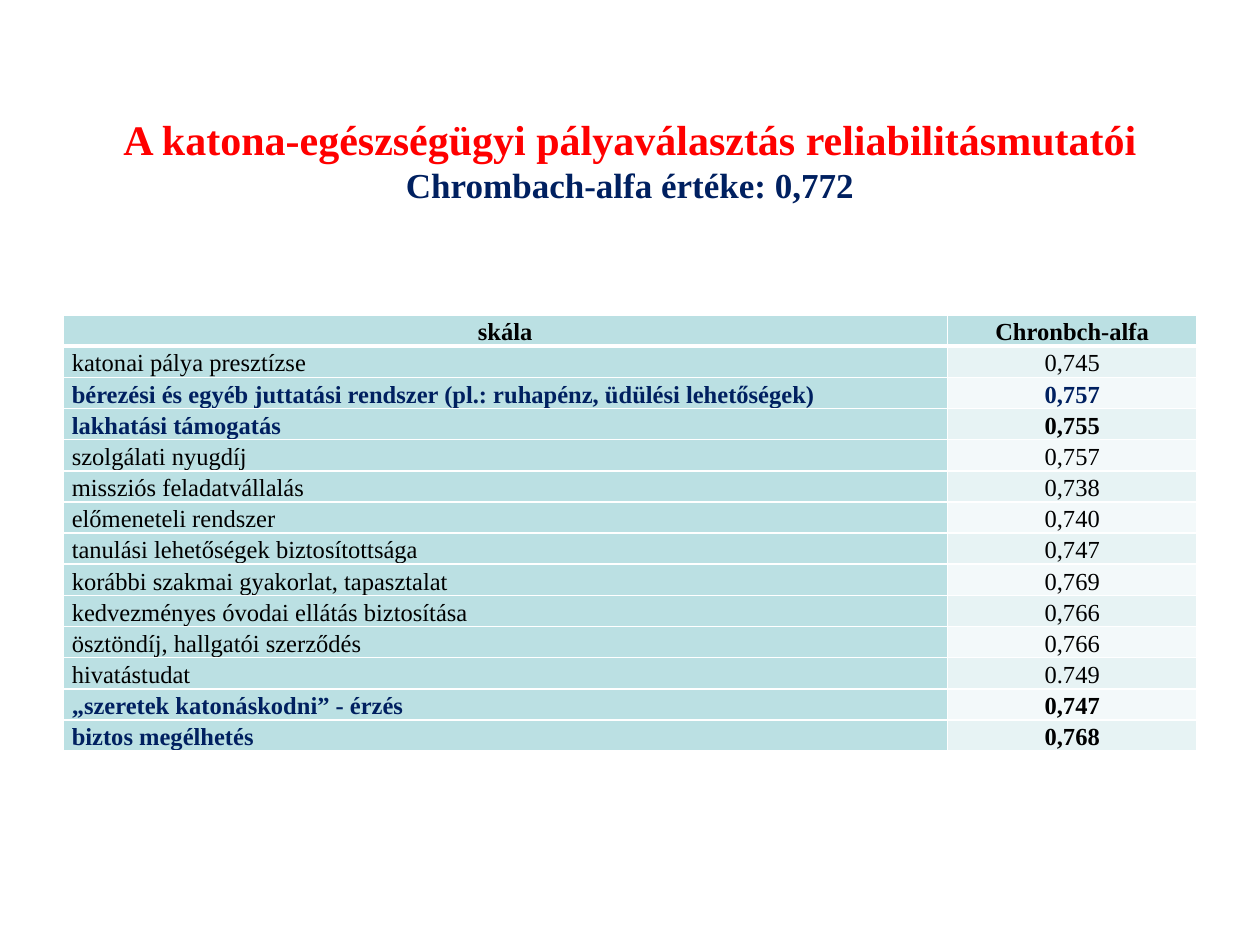
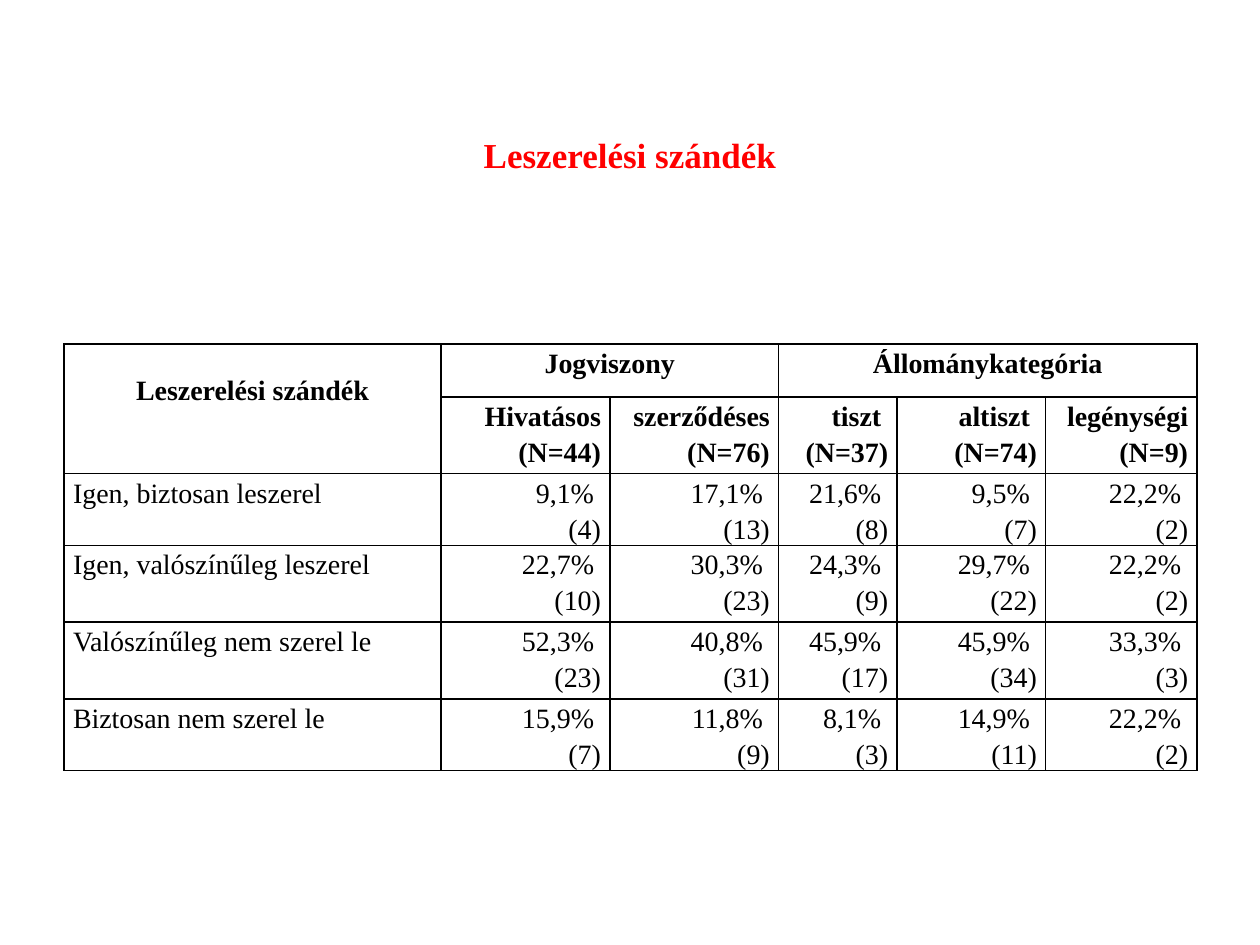
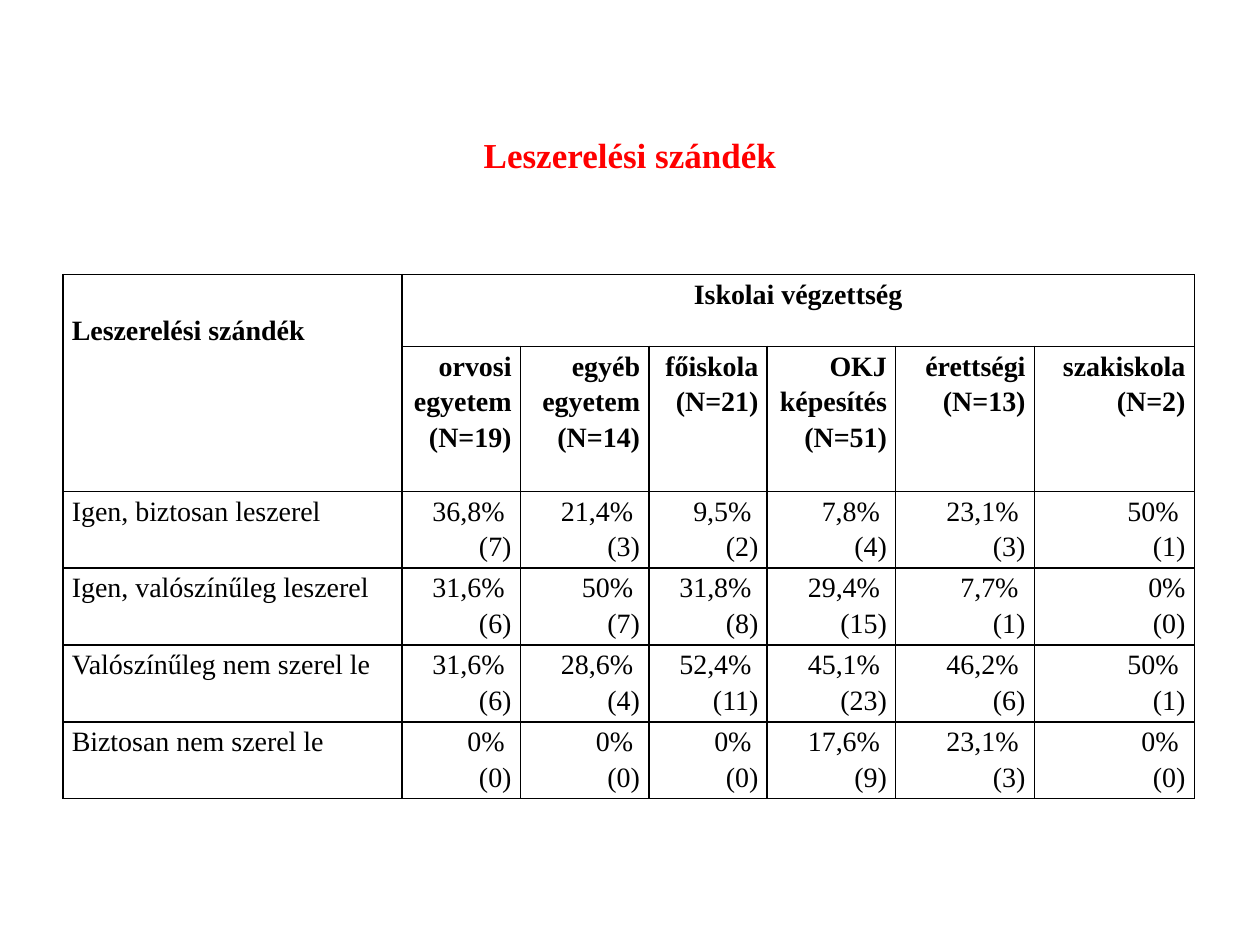
from lxml.etree import SubElement
from pptx import Presentation
from pptx.dml.color import RGBColor
from pptx.enum.text import MSO_ANCHOR as Anchor, MSO_AUTO_SIZE as AutoSize, PP_ALIGN as Align
from pptx.oxml.ns import qn
from pptx.util import Inches, Pt

FONT = "Times New Roman"
RED, NAVY, BLACK, WHITE = "FF0000", "002060", "000000", "FFFFFF"
TEAL, BANDS = "BBE0E3", ("F3F9FA", "E7F3F4")
TITLE_ONLY = 5


def paint(target, color):
    """Give a font its colour, or a fill its solid colour."""
    if hasattr(target, "solid"):
        target.solid()
        target.fore_color.rgb = RGBColor.from_string(color)
    else:
        target.color.rgb = RGBColor.from_string(color)


def add_grid(slide, left, top, height, widths, heights, border):
    """Add a table whose cells have thin margins and one border colour."""
    frame = slide.shapes.add_table(len(heights), len(widths), Inches(left),
                                   Inches(top), Inches(sum(widths)), Inches(height))
    grid = frame.table
    grid.first_row = grid.horz_banding = False
    for column, width in zip(grid.columns, widths):
        column.width = Inches(width)
    for row, row_height in zip(grid.rows, heights):
        row.height = Inches(row_height)
    frame.height = Inches(height)
    for cell in grid.iter_cells():
        cell.margin_left = cell.margin_right = Inches(0.07)
        cell.margin_top = cell.margin_bottom = 0
        for side in ("L", "R", "T", "B"):
            line = SubElement(cell._tc.get_or_add_tcPr(), qn(f"a:ln{side}"), w=str(Pt(1)))
            SubElement(SubElement(line, qn("a:solidFill")), qn("a:srgbClr"), val=border)
        cell.fill.background()
    return grid


reliability = [
    ("skála", "Chronbch-alfa"),
    ("katonai pálya presztízse", "0,745"),
    ("bérezési és egyéb juttatási rendszer (pl.: ruhapénz, üdülési lehetőségek)", "0,757"),
    ("lakhatási támogatás", "0,755"),
    ("szolgálati nyugdíj", "0,757"),
    ("missziós feladatvállalás", "0,738"),
    ("előmeneteli rendszer", "0,740"),
    ("tanulási lehetőségek biztosítottsága", "0,747"),
    ("korábbi szakmai gyakorlat, tapasztalat", "0,769"),
    ("kedvezményes óvodai ellátás biztosítása", "0,766"),
    ("ösztöndíj, hallgatói szerződés", "0,766"),
    ("hivatástudat", "0.749"),
    ("„szeretek katonáskodni” - érzés", "0,747"),
    ("biztos megélhetés", "0,768"),
]
key_rows = (2, 3, 12, 13)
navy_cells = [(row, 0) for row in key_rows] + [(2, 1)]

answers = ["Igen, biztosan leszerel", "Igen, valószínűleg leszerel",
           "Valószínűleg nem szerel le", "Biztosan nem szerel le"]
by_status = {
    "left": 0.51, "top": 2.73, "height": 3.49,
    "widths": [2.99, 1.34, 1.34, 0.94, 1.18, 1.2],
    "heights": [0.42, 0.61, 0.45, 0.61, 0.61, 0.45],
    "corner_align": Align.CENTER, "corner_drop": 0.21,
    "groups": [("Jogviszony", 1, 2), ("Állománykategória", 3, 5)],
    "heads": ["Hivatásos (N=44)", "szerződéses (N=76)", "tiszt \n(N=37)",
              "altiszt \n(N=74)", "legénységi (N=9)"],
    "shares": [
        ["9,1% (4)", "17,1% (13)", "21,6% (8)", "9,5% (7)", "22,2% (2)"],
        ["22,7% (10)", "30,3% (23)", "24,3% (9)", "29,7% (22)", "22,2% (2)"],
        ["52,3% (23)", "40,8% (31)", "45,9% (17)", "45,9% (34)", "33,3% (3)"],
        ["15,9% (7)", "11,8% (9)", "8,1% (3)", "14,9% (11)", "22,2% (2)"],
    ],
}
by_schooling = {
    "left": 0.5, "top": 2.18, "height": 4.17,
    "widths": [2.69, 0.94, 1.02, 0.94, 1.02, 1.1, 1.27],
    "heights": [0.57, 1.15] + [0.61] * 4,
    "corner_align": Align.LEFT, "corner_drop": 0.29,
    "groups": [("Iskolai végzettség", 1, 6)],
    "heads": ["orvosi egyetem\n(N=19)", "egyéb egyetem\n(N=14)", "főiskola\n(N=21)",
              "OKJ képesítés\n(N=51)", "érettségi\n(N=13)", "szakiskola\n(N=2)"],
    "shares": [
        ["36,8% (7)", "21,4% (3)", "9,5% (2)", "7,8% (4)", "23,1% (3)", "50% (1)"],
        ["31,6% (6)", "50% (7)", "31,8% (8)", "29,4% (15)", "7,7% (1)", "0%\n(0)"],
        ["31,6% (6)", "28,6% (4)", "52,4% (11)", "45,1% (23)", "46,2% (6)", "50% (1)"],
        ["0% (0)", "0% (0)", "0% (0)", "17,6% (9)", "23,1% (3)", "0% (0)"],
    ],
}

prs = Presentation()
prs.slide_width, prs.slide_height = Inches(10), Inches(7.5)

# Titles: top, height, and the text, size and colour of each line
intent_title = (0.91, 0.63, [("Leszerelési szándék", 20, RED)])
titles = [
    (0.52, 1.03, [("A katona-egészségügyi pályaválasztás reliabilitásmutatói", 24, RED),
                  ("Chrombach-alfa értéke: 0,772", 20, NAVY)]),
    intent_title,
    intent_title,
]
for top, height, lines in titles:
    title = prs.slides.add_slide(prs.slide_layouts[TITLE_ONLY]).shapes.title
    title.left, title.top = Inches(0.5), Inches(top)
    title.width, title.height = Inches(9), Inches(height)
    heading = title.text_frame
    heading.text = "\v".join(text for text, size, color in lines)
    heading.auto_size = AutoSize.NONE
    heading.vertical_anchor = Anchor.MIDDLE
    if len(lines) > 1:
        heading.vertical_anchor = Anchor.TOP
        heading.margin_top = Inches(0.38)
    heading.paragraphs[0].alignment = Align.CENTER
    for run, (text, size, color) in zip(heading.paragraphs[0].runs, lines):
        run.font.name, run.font.size, run.font.bold = FONT, Pt(size), True
        paint(run.font, color)

reliability_slide, *intent_slides = prs.slides

# Reliability of the career choice scales
scales = add_grid(reliability_slide, 0.5, 2.5, 3.76, [7.02, 1.98],
                  [0.23] * len(reliability), WHITE)
for r, entries in enumerate(reliability):
    for c, text in enumerate(entries):
        cell = scales.cell(r, c)
        paint(cell.fill, TEAL if r == 0 or c == 0 else BANDS[r % 2])
        if r < 2:
            header_edge = cell._tc.tcPr.find(qn("a:lnT" if r else "a:lnB"))
            header_edge.set("w", str(Pt(3)))
        cell.text = text
        entry = cell.text_frame.paragraphs[0]
        entry.alignment = Align.JUSTIFY if r and c == 0 else Align.CENTER
        entry.line_spacing = 1.15
        font = entry.runs[0].font
        font.name, font.size, font.bold = FONT, Pt(14), r == 0 or r in key_rows
        paint(font, NAVY if (r, c) in navy_cells else BLACK)

# Intention to leave the service, by group
for slide, survey in zip(intent_slides, (by_status, by_schooling)):
    grid = add_grid(slide, survey["left"], survey["top"], survey["height"],
                    survey["widths"], survey["heights"], BLACK)
    corner = grid.cell(0, 0)
    corner.merge(grid.cell(1, 0))
    corner.text = "Leszerelési szándék"
    corner.margin_top = Inches(survey["corner_drop"])
    for group, first, last in survey["groups"]:
        grid.cell(0, first).merge(grid.cell(0, last))
        grid.cell(0, first).text = group
    for c, head in enumerate(survey["heads"], 1):
        grid.cell(1, c).text = head
    for r, (answer, shares) in enumerate(zip(answers, survey["shares"]), 2):
        grid.cell(r, 0).text = answer
        for c, share in enumerate(shares, 1):
            grid.cell(r, c).text = share.replace("% ", "% \n")
    for r in range(len(survey["heights"])):
        for c in range(len(survey["widths"])):
            for line in grid.cell(r, c).text_frame.paragraphs:
                line.line_spacing = 1.15
                if c == 0:
                    line.alignment = survey["corner_align"] if r == 0 else Align.LEFT
                else:
                    line.alignment = Align.CENTER if r == 0 else Align.RIGHT
                for run in line.runs:
                    run.font.name, run.font.size, run.font.bold = FONT, Pt(16), r < 2
                    paint(run.font, BLACK)

prs.save("out.pptx")
